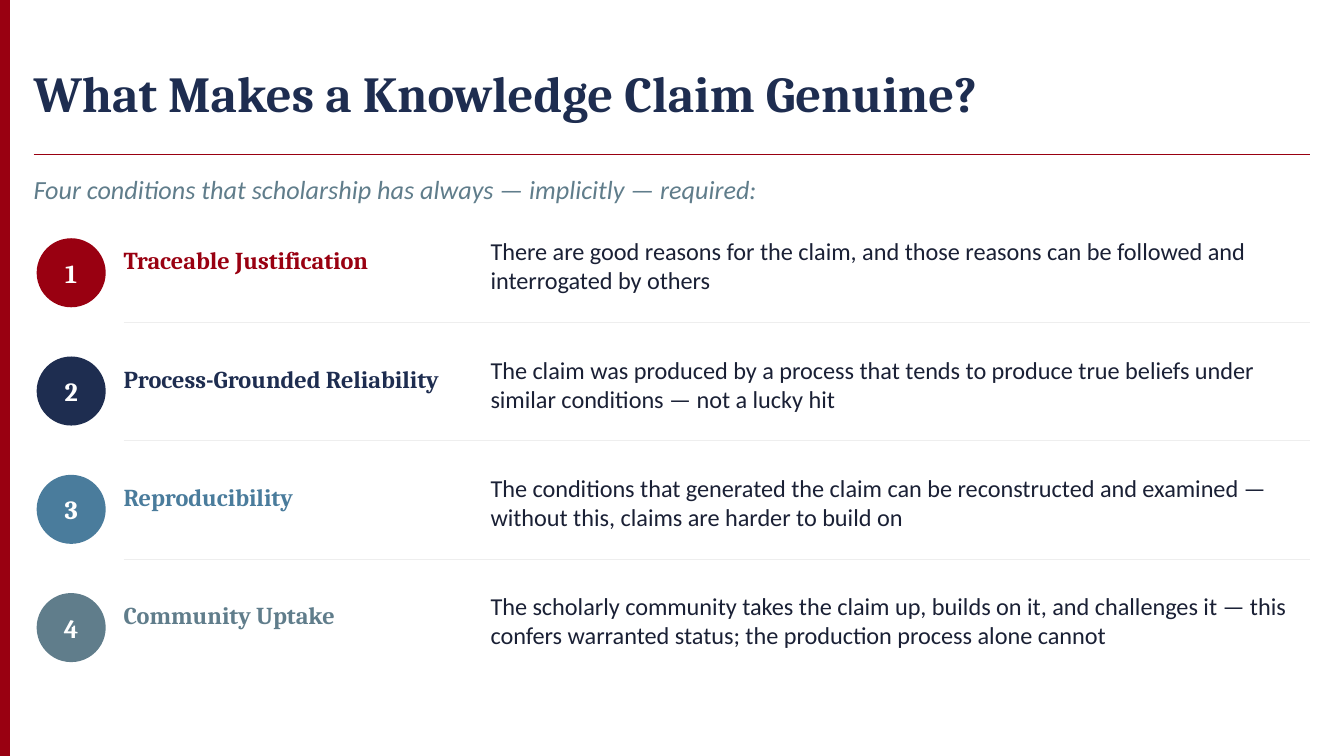
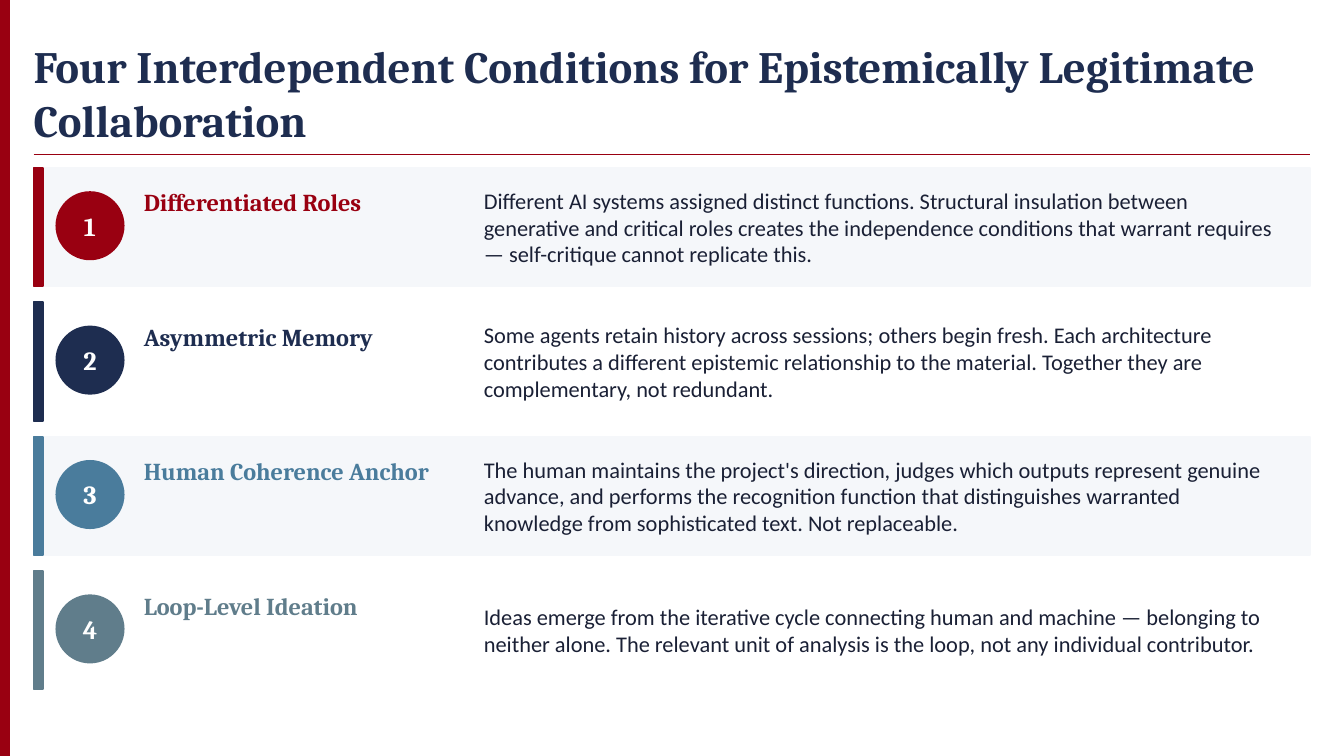
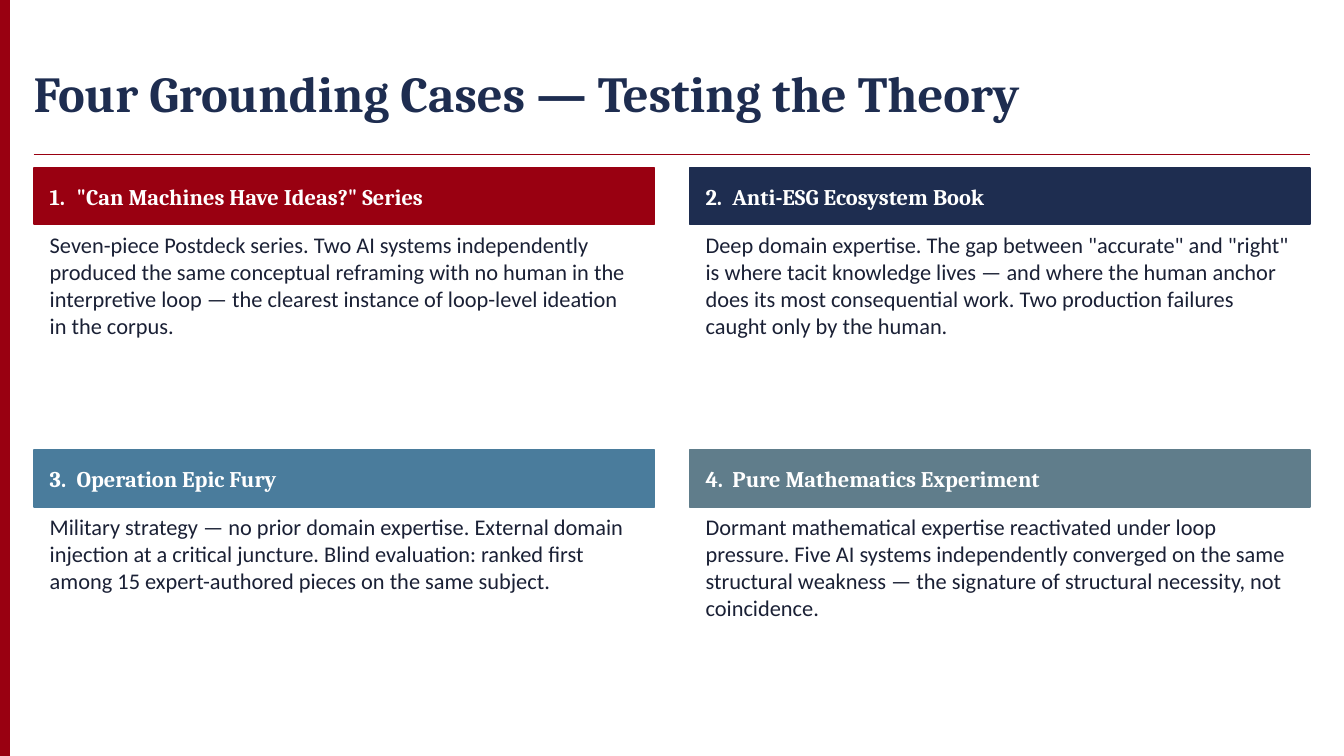
from dataclasses import dataclass

from lxml.etree import SubElement
from pptx import Presentation
from pptx.dml.color import RGBColor
from pptx.enum.shapes import MSO_CONNECTOR, MSO_SHAPE
from pptx.enum.text import MSO_ANCHOR, MSO_AUTO_SIZE, PP_ALIGN
from pptx.oxml.ns import qn
from pptx.util import Inches, Pt

HEX = {
    "red": "990011",
    "navy": "1E2D50",
    "blue": "4A7C9C",
    "slate": "607D8B",
    "ink": "1A2035",
    "white": "FFFFFF",
    "pale": "F5F7FA",
    "rule": "EEEEEE",
}
TONES = ("red", "navy", "blue", "slate")
SERIF, SANS = "Cambria", "Calibri"
LEFT, RIGHT = 0.25, 9.75
WIDE = 10
HIGH = WIDE * 9 / 16
SPAN = RIGHT - LEFT
BAR = 0.07
DISC = 0.5


@dataclass(frozen=True)
class Style:
    """Font settings of one paragraph."""
    size: int
    tone: str
    face: str = SANS
    bold: bool = False
    slant: bool = False


@dataclass(frozen=True)
class Item:
    """A heading with its text."""
    head: str
    body: str


CLAIMS = (
    Item("Traceable Justification",
         "There are good reasons for the claim, and those reasons can be followed "
         "and interrogated by others"),
    Item("Process-Grounded Reliability",
         "The claim was produced by a process that tends to produce true beliefs "
         "under similar conditions — not a lucky hit"),
    Item("Reproducibility",
         "The conditions that generated the claim can be reconstructed and "
         "examined — without this, claims are harder to build on"),
    Item("Community Uptake",
         "The scholarly community takes the claim up, builds on it, and challenges "
         "it — this confers warranted status; the production process alone cannot"),
)
ROLES = (
    Item("Differentiated Roles",
         "Different AI systems assigned distinct functions. Structural insulation "
         "between generative and critical roles creates the independence conditions "
         "that warrant requires — self-critique cannot replicate this."),
    Item("Asymmetric Memory",
         "Some agents retain history across sessions; others begin fresh. Each "
         "architecture contributes a different epistemic relationship to the "
         "material. Together they are complementary, not redundant."),
    Item("Human Coherence Anchor",
         "The human maintains the project's direction, judges which outputs "
         "represent genuine advance, and performs the recognition function that "
         "distinguishes warranted knowledge from sophisticated text. Not replaceable."),
    Item("Loop-Level Ideation",
         "Ideas emerge from the iterative cycle connecting human and machine — "
         "belonging to neither alone. The relevant unit of analysis is the loop, "
         "not any individual contributor."),
)
CASES = (
    Item('"Can Machines Have Ideas?" Series',
         "Seven-piece Postdeck series. Two AI systems independently produced the "
         "same conceptual reframing with no human in the interpretive loop — the "
         "clearest instance of loop-level ideation in the corpus."),
    Item("Anti-ESG Ecosystem Book",
         'Deep domain expertise. The gap between "accurate" and "right" is where '
         "tacit knowledge lives — and where the human anchor does its most "
         "consequential work. Two production failures caught only by the human."),
    Item("Operation Epic Fury",
         "Military strategy — no prior domain expertise. External domain injection "
         "at a critical juncture. Blind evaluation: ranked first among 15 "
         "expert-authored pieces on the same subject."),
    Item("Pure Mathematics Experiment",
         "Dormant mathematical expertise reactivated under loop pressure. Five AI "
         "systems independently converged on the same structural weakness — the "
         "signature of structural necessity, not coincidence."),
)


def paint(tone: str) -> RGBColor:
    """Give the colour of a tone."""
    return RGBColor.from_string(HEX[tone])


def write(shape, text: str, style: Style, anchor=MSO_ANCHOR.MIDDLE,
          align=PP_ALIGN.LEFT, inset: float = 0, tab: float = 0) -> None:
    """Fill a shape with one styled paragraph."""
    frame = shape.text_frame
    frame.word_wrap = True
    frame.auto_size = MSO_AUTO_SIZE.NONE
    frame.vertical_anchor = anchor
    frame.margin_left = frame.margin_right = Inches(inset)
    frame.margin_top = frame.margin_bottom = 0
    frame.text = text
    para = frame.paragraphs[0]
    para.alignment = align
    if tab:
        stops = SubElement(para._p.get_or_add_pPr(), qn("a:tabLst"))
        SubElement(stops, qn("a:tab"), pos=str(Inches(tab)), algn="l")
    font = para.font
    font.name, font.size = style.face, Pt(style.size)
    font.bold, font.italic = style.bold, style.slant
    font.color.rgb = paint(style.tone)


def label(slide, x: float, y: float, w: float, h: float, text: str,
          style: Style, anchor=MSO_ANCHOR.MIDDLE) -> None:
    """Add a text box without margins."""
    box = slide.shapes.add_textbox(Inches(x), Inches(y), Inches(w), Inches(h))
    write(box, text, style, anchor)


def block(slide, x: float, y: float, w: float, h: float, tone: str,
          kind=MSO_SHAPE.RECTANGLE):
    """Add a shape in one flat colour."""
    shape = slide.shapes.add_shape(kind, Inches(x), Inches(y), Inches(w), Inches(h))
    shape.shadow.inherit = False
    shape.fill.solid()
    shape.fill.fore_color.rgb = paint(tone)
    shape.line.color.rgb = paint(tone)
    shape.line.width = Pt(1)
    return shape


def rule(slide, x: float, y: float, tone: str, width: float) -> None:
    """Draw a level line to the right margin."""
    line = slide.shapes.add_connector(
        MSO_CONNECTOR.STRAIGHT, Inches(x), Inches(y), Inches(RIGHT), Inches(y))
    line.line.color.rgb = paint(tone)
    line.line.width = Pt(width)
    SubElement(line._element.spPr, qn("a:effectLst"))


def badge(slide, x: float, y: float, num: int, tone: str) -> None:
    """Draw a numbered disc."""
    disc = block(slide, x, y, DISC, DISC, tone, MSO_SHAPE.OVAL)
    write(disc, str(num), Style(14, "white", SERIF, bold=True), align=PP_ALIGN.CENTER)


def start(deck, title: str, size: int = 27):
    """Add a slide with side bar, title and rule."""
    slide = deck.slides.add_slide(deck.slide_layouts[5])
    block(slide, 0, 0, BAR, HIGH, "red")
    head = slide.shapes.title
    head.left, head.top = Inches(LEFT), Inches(0.28)
    head.width, head.height = Inches(SPAN), Inches(0.82)
    write(head, title, Style(size, "navy", SERIF, bold=True))
    rule(slide, LEFT, 1.15, "red", 0.75)
    return slide


def claims(deck) -> None:
    """Build the slide on knowledge claims."""
    slide = start(deck, "What Makes a Knowledge Claim Genuine?")
    label(slide, LEFT, 1.22, SPAN, 0.38,
          "Four conditions that scholarship has always — implicitly — required:",
          Style(14, "slate", slant=True))
    for i, (item, tone) in enumerate(zip(CLAIMS, TONES)):
        y = 1.76 + 0.88 * i
        if i:
            rule(slide, 0.92, y - 0.24, "rule", 0.5)
        badge(slide, 0.28, y + 0.02, i + 1, tone)
        label(slide, 0.92, y, 2.6, 0.35, item.head, Style(13, tone, SERIF, bold=True))
        label(slide, 3.65, y, 6.1, 0.6, item.body, Style(13, "ink"), MSO_ANCHOR.TOP)


def roles(deck) -> None:
    """Build the slide on joint work."""
    slide = start(
        deck, "Four Interdependent Conditions for Epistemically Legitimate Collaboration", 24)
    for i, (item, tone) in enumerate(zip(ROLES, TONES)):
        y = 1.25 + i
        block(slide, LEFT, y, SPAN, 0.88, "white" if i % 2 else "pale")
        block(slide, LEFT, y, BAR, 0.88, tone)
        badge(slide, 0.42, y + 0.18, i + 1, tone)
        label(slide, 1.07, y + 0.08, 2.4, 0.35, item.head,
              Style(13, tone, SERIF, bold=True))
        label(slide, 3.6, y + 0.05, 5.95, 0.78, item.body, Style(12, "ink"))


def cases(deck) -> None:
    """Build the two by two grid of cases."""
    slide = start(deck, "Four Grounding Cases — Testing the Theory")
    card, pad = 4.62, 0.12
    for i, (item, tone) in enumerate(zip(CASES, TONES)):
        row, col = divmod(i, 2)
        x = LEFT + col * (SPAN - card)
        y = 1.25 + 2.1 * row
        band = block(slide, x, y, card, 0.42, tone)
        write(band, f"{i + 1}.\t{item.head}", Style(12, "white", SERIF, bold=True),
              inset=pad, tab=0.2)
        label(slide, x + pad, y + 0.47, card - 2 * pad, 1.55, item.body,
              Style(12, "ink"), MSO_ANCHOR.TOP)


def main() -> None:
    """Build and save the deck."""
    deck = Presentation()
    deck.slide_width, deck.slide_height = Inches(WIDE), Inches(HIGH)
    for build in (claims, roles, cases):
        build(deck)
    deck.save("out.pptx")


if __name__ == "__main__":
    main()
